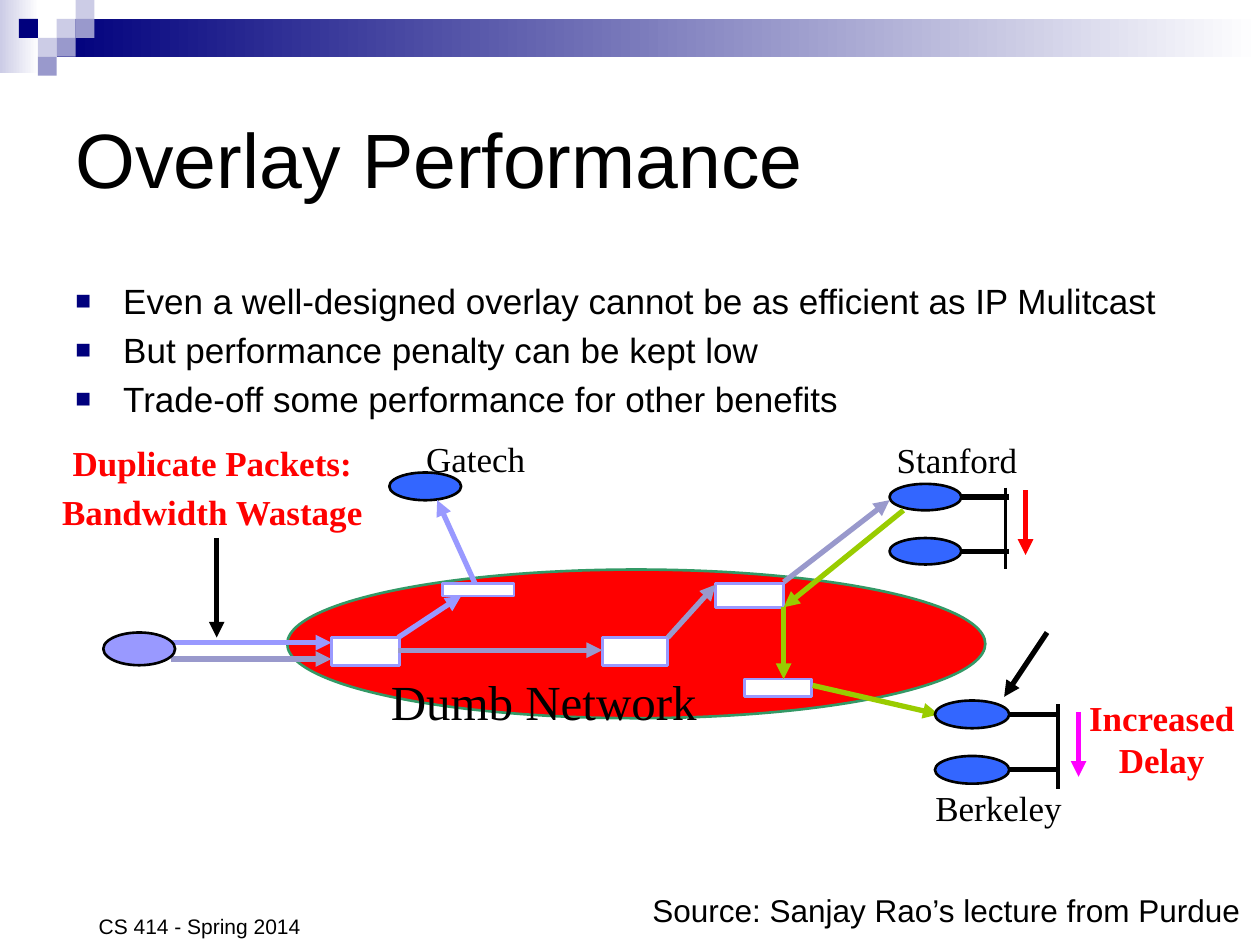
from collections import namedtuple

from lxml import etree
from pptx import Presentation
from pptx import util as u
from pptx.dml.color import RGBColor
from pptx.enum import shapes, text
from pptx.oxml import ns

COLS, ROWS = 100, 75
deck = Presentation()
deck.slide_width, deck.slide_height = u.Inches(10), u.Inches(7.5)
CELL_W, CELL_H = deck.slide_width / COLS, deck.slide_height / ROWS

SANS, SERIF = "Arial", "Times New Roman"
BLACK, WHITE, RED, NAVY = "000000", "FFFFFF", "FF0000", "00007D"
LAVENDER, MUTED, PALE = "9999FF", "9999CC", "CCCCE6"
BLUE, GREEN, MAGENTA, CLOUD_EDGE = "3366FF", "99CC00", "FF00FF", "339966"
OVAL, RECT = shapes.MSO_SHAPE.OVAL, shapes.MSO_SHAPE.RECTANGLE


class Box(namedtuple("Box", "left top width height")):
    """An area in grid columns and rows."""

    def inner(self, left, top, width, height):
        return Box(self.left + left, self.top + top, width, height)

    def point(self, x, y):
        return self.left + x, self.top + y

    def emu(self):
        return (round(self.left * CELL_W), round(self.top * CELL_H),
                round(self.width * CELL_W), round(self.height * CELL_H))


def color(value):
    return RGBColor.from_string(value)


def add_child(parent, tag, **attributes):
    return etree.SubElement(parent, ns.qn(tag), attributes)


def add_block(page, box, fill, kind=RECT, edge=None, fade=None):
    """Draw a preset shape; fade gives the right-hand colour of a gradient."""
    block = page.shapes.add_shape(kind, *box.emu())
    block.shadow.inherit = False
    if fade:
        block.fill.gradient()
        block.fill.gradient_angle = 0
        for stop, shade in zip(block.fill.gradient_stops, (fill, fade)):
            stop.color.rgb = color(shade)
    else:
        block.fill.solid()
        block.fill.fore_color.rgb = color(fill)
    if edge:
        block.line.color.rgb = color(edge)
        block.line.width = u.Pt(1.5)
    else:
        block.line.fill.background()


def add_line(page, start, end, shade=BLACK, width=3, arrow=False):
    ends = [round(v) for x, y in (start, end) for v in (x * CELL_W, y * CELL_H)]
    line = page.shapes.add_connector(shapes.MSO_CONNECTOR.STRAIGHT, *ends)
    line.line.color.rgb = color(shade)
    line.line.width = u.Pt(width)
    if arrow:
        add_child(line.line._get_or_add_ln(), "a:tailEnd", type="triangle")
    add_child(line._element.spPr, "a:effectLst")


def add_bullet(para):
    props = para._p.get_or_add_pPr()
    props.set("marL", str(u.Inches(0.38)))
    props.set("indent", str(-u.Inches(0.38)))
    add_child(add_child(props, "a:buClr"), "a:srgbClr", val=NAVY)
    add_child(props, "a:buSzPct", val="75000")
    add_child(props, "a:buFont", typeface=SANS)
    add_child(props, "a:buChar", char="■")


def write(holder, words, size=20, font=SERIF, shade=BLACK, bold=False,
          align="CENTER", anchor="MIDDLE", wrap=True, bullet=False):
    """Fill a text holder, one paragraph for each line of words."""
    frame = holder.text_frame
    frame.auto_size = text.MSO_AUTO_SIZE.NONE
    frame.word_wrap = wrap
    frame.vertical_anchor = text.MSO_ANCHOR[anchor]
    for index, line in enumerate(words.split("\n")):
        para = frame.add_paragraph() if index else frame.paragraphs[0]
        para.alignment = text.PP_ALIGN[align]
        para.space_before = u.Pt(size * 0.2 if index else 0)
        if bullet:
            add_bullet(para)
        span = para.add_run()
        span.text = line
        span.font.name, span.font.size = font, u.Pt(size)
        span.font.bold, span.font.color.rgb = bold, color(shade)


def add_text(page, box, words, **style):
    write(page.shapes.add_textbox(*box.emu()), words, **style)


def draw_banner(page, box):
    tile = 1.5
    add_block(page, box.inner(0, 0, 3.1, 5.8), PALE, fade=WHITE)
    add_block(page, box.inner(3 * tile, tile, box.width - 3 * tile, 2 * tile),
              NAVY, fade=WHITE)
    for column, row, fill in ((3, 1, PALE), (4, 0, PALE), (4, 1, MUTED),
                              (2, 2, PALE), (1, 1, NAVY), (3, 2, MUTED),
                              (2, 3, MUTED)):
        add_block(page, box.inner(column * tile, row * tile, tile, tile), fill)


def draw_title(page, box):
    title = page.shapes.title
    title.left, title.top, title.width, title.height = box.emu()
    write(title, "Overlay Performance", size=44, font=SANS, align="LEFT")


def draw_bullets(page, box):
    add_text(page, box,
             "Even a well-designed overlay cannot be as efficient as IP Mulitcast\n"
             "But performance penalty can be kept low\n"
             "Trade-off some performance for other benefits",
             font=SANS, align="LEFT", anchor="TOP", bullet=True)


def draw_receivers(page, box, host_w, host_h, stub_end, delay_top, delay_shade):
    """Two hosts joined to a bar, with a delay arrow on the box's right edge."""
    tops = (0, box.height - host_h - 0.4)
    bar = stub_end - 0.3 if stub_end < 9.8 else stub_end
    add_line(page, box.point(bar, 0.3), box.point(bar, box.height), width=2.25)
    for top in tops:
        middle = top + host_h / 2
        add_line(page, box.point(stub_end, middle), box.point(host_w - 0.3, middle))
        add_block(page, box.inner(0, top, host_w, host_h), BLUE, OVAL, BLACK)
    add_line(page, box.point(box.width, delay_top),
             box.point(box.width, delay_top + 5.15), delay_shade, arrow=True)


def draw_network(page, box):
    """Draw the cloud, its routers, the hosts around it and their links."""
    add_block(page, box.inner(22.8, 11.2, 55.4, 11.8), RED, OVAL, CLOUD_EDGE)
    add_text(page, box.inner(27.2, 18.8, 31.9, 5.7), "Dumb Network", size=28)
    for router in ((26.3, 16.6, 5.4, 2.2), (35.1, 12.3, 5.7, 1),
                   (47.8, 16.6, 5.2, 2.2), (56.8, 12.3, 5.4, 1.9),
                   (59.1, 19.9, 5.3, 1.4)):
        add_block(page, box.inner(*router), WHITE, edge=LAVENDER)
    add_block(page, box.inner(30.9, 3.5, 5.7, 2.2), BLUE, OVAL, BLACK)
    draw_receivers(page, box.inner(70.6, 4.4, 10.8, 6.8),
                   5.7, 2.1, 9.5, 0.5, RED)

    routes = {
        LAVENDER: ((31.6, 16.6, 36.6, 13.3), (37.7, 12.3, 34.7, 5.7),
                   (13.6, 17, 26.3, 17)),
        MUTED: ((13.6, 18.3, 26.3, 18.3), (31.6, 17.6, 47.8, 17.6),
                (53, 16.6, 56.8, 12.4), (62.2, 12.2, 70.6, 5.7)),
        GREEN: ((71.7, 6.5, 62.2, 14.2), (62.2, 14.2, 62.2, 19.9),
                (64.5, 20.4, 74.5, 22.7)),
        BLACK: ((17.2, 8.7, 17.2, 16.6), (83.1, 16.2, 79.7, 21.3)),
    }
    for shade, links in routes.items():
        for x1, y1, x2, y2 in links:
            add_line(page, box.point(x1, y1), box.point(x2, y2), shade, arrow=True)

    draw_receivers(page, box.inner(74.2, 21.6, 11.4, 7),
                   5.9, 2.2, 9.8, 0.9, MAGENTA)
    add_block(page, box.inner(8.2, 16.2, 5.7, 2.6), LAVENDER, OVAL, BLACK)
    add_text(page, box.inner(32.8, 0.2, 9.9, 4.3), "Gatech", wrap=False)
    add_text(page, box.inner(69.7, 0.3, 12.5, 4.3), "Stanford")
    add_text(page, box.inner(69.7, 27.9, 19.1, 4.3), "Berkeley")
    add_text(page, box.inner(0.8, 0.5, 32.8, 8.3),
             "Duplicate Packets: \nBandwidth Wastage ", shade=RED, bold=True)
    add_text(page, box.inner(83.1, 20.8, 18.2, 7.7), "Increased Delay",
             shade=RED, bold=True)


def draw_footer(page, box):
    add_text(page, box.inner(50.8, 0.2, 48.7, 4), "Source: Sanjay Rao’s lecture from Purdue",
             size=18, font=SANS, align="LEFT", anchor="TOP", wrap=False)
    add_text(page, box.inner(0, 0, 31.7, box.height), "CS 414 - Spring 2014",
             size=12, font=SANS, anchor="BOTTOM")


def main():
    page = deck.slides.add_slide(deck.slide_layouts[5])
    draw_banner(page, Box(0, 0, COLS, 6))
    draw_title(page, Box(5, 5, 90, 15))
    draw_bullets(page, Box(5, 21.7, 90, 42.5))
    draw_network(page, Box(0, 34, COLS, 33))
    draw_footer(page, Box(0, 70, COLS, 5))
    deck.save("out.pptx")


if __name__ == "__main__":
    main()
